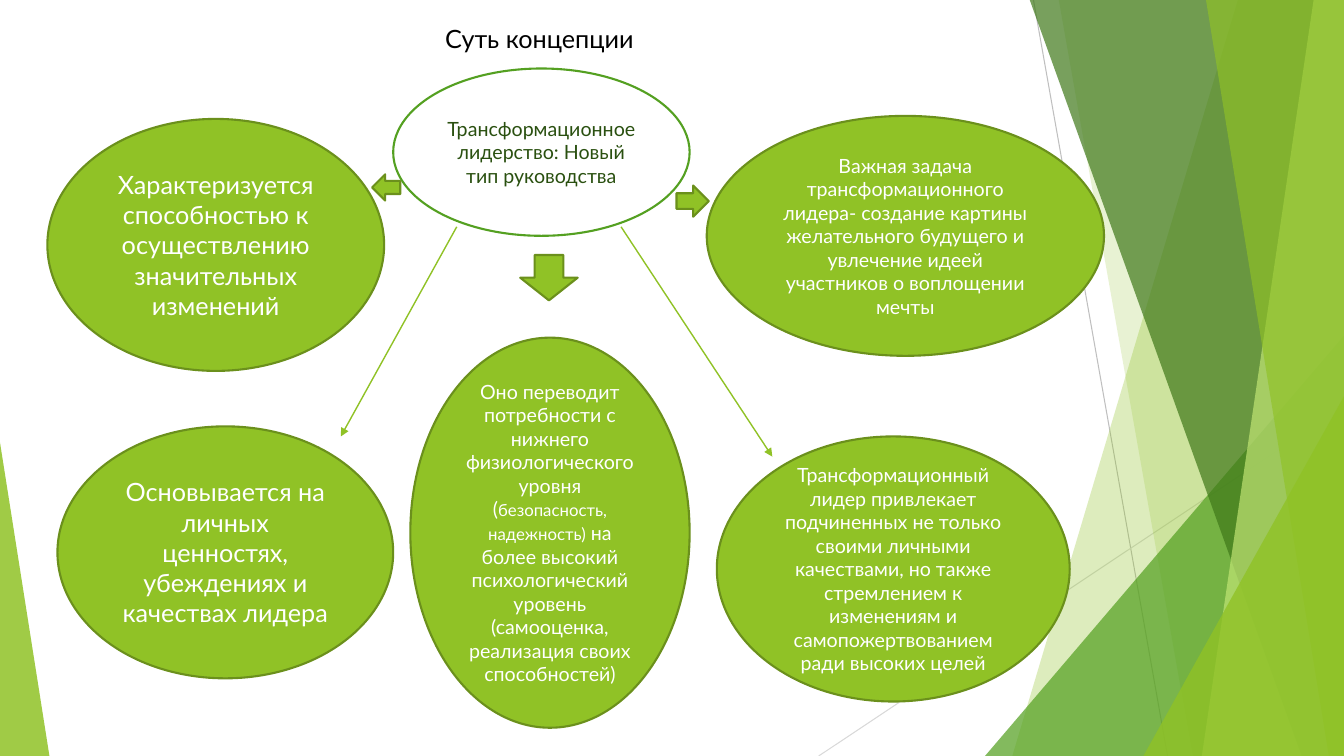
"""Build the slide on the essence of transformational leadership."""
from dataclasses import dataclass

from lxml import etree
from pptx import Presentation
from pptx import util as u
from pptx.dml.color import RGBColor
from pptx.enum import shapes, text
from pptx.oxml import ns

LIME = RGBColor(0x90, 0xC2, 0x26)
OLIVE = RGBColor(0x6B, 0x90, 0x1C)
GREEN = RGBColor(0x54, 0xA0, 0x21)
FOREST = RGBColor(0x3F, 0x78, 0x19)
PALE = RGBColor(0xC0, 0xE4, 0x74)
DARK = RGBColor(0x2A, 0x50, 0x10)
GRAY = RGBColor(0xBF, 0xBF, 0xBF)
SILVER = RGBColor(0xD9, 0xD9, 0xD9)
WHITE = RGBColor(0xFF, 0xFF, 0xFF)
BLACK = RGBColor(0, 0, 0)
FONT = "Lato"
WIDTH, HEIGHT, TOP = 13.33, 7.5, -0.01
KIND = shapes.MSO_SHAPE


@dataclass
class Band:
    """Translucent band from the slide's top edge to its bottom right."""
    top_x: float
    bottom_x: float
    color: RGBColor
    alpha: int


@dataclass
class Corner:
    """Translucent right triangle standing on the bottom edge."""
    left: float
    top: float
    width: float
    apex: int
    color: RGBColor
    alpha: int


@dataclass
class Line:
    """Straight line, with an arrowhead at its end if wanted."""
    start: tuple[float, float]
    end: tuple[float, float]
    color: RGBColor
    weight: float
    arrow: bool = False


@dataclass
class Figure:
    """Outlined shape; each run is a text with its own size or None."""
    kind: KIND
    box: tuple[float, float, float, float]
    runs: tuple[tuple[str, int | None], ...] = ()
    size: int = 14
    fill: RGBColor = LIME
    line: RGBColor = OLIVE
    color: RGBColor = WHITE


BACK_LINES = [
    Line((10.25, 0), (11.58, HEIGHT), GRAY, 0.75),
    Line((WIDTH, 4.03), (8.12, HEIGHT), SILVER, 0.75),
]
FACETS = [
    Band(12.28, 10.04, LIME, 30),
    Band(10.5, 11.83, LIME, 20),
    Corner(9.77, 3.33, 3.56, 1, GREEN, 72),
    Band(10.21, 12.91, FOREST, 70),
    Band(13.03, 11.92, PALE, 70),
    Band(11.96, 13.18, LIME, 65),
    Corner(11.34, 3.93, 1.99, 1, LIME, 80),
    Corner(0, 4.39, 0.49, 0, LIME, 85),
]
FIGURES = [
    Figure(KIND.OVAL, (3.9, 0.68, 2.94, 1.66),
           (("Трансформационное лидерство: Новый тип руководства", None),),
           fill=WHITE, line=GREEN, color=DARK),
    Figure(KIND.OVAL, (0.47, 1.18, 3.34, 2.5),
           (("Характеризуется способностью к осуществлению значительных "
             "изменений", None),), 18),
    Figure(KIND.OVAL, (0.57, 4.23, 3.33, 2.5),
           (("Основывается на личных ценностях, убеждениях и качествах "
             "лидера", None),), 18),
    Figure(KIND.OVAL, (4.07, 3.35, 2.77, 3.87),
           (("Оно переводит потребности с нижнего физиологического уровня (", 14),
            ("безопасность, надежность)", 12),
            (" на более высокий психологический уровень (самооценка, "
             "реализация своих способностей)", 14))),
    Figure(KIND.OVAL, (7.11, 4.33, 3.5, 2.63),
           (("Трансформационный лидер привлекает подчиненных не только своими "
             "личными качествами, но также стремлением к изменениям и "
             "самопожертвованием ради высоких целей", None),)),
    Figure(KIND.OVAL, (7.01, 1.15, 3.94, 2.38),
           (("Важная задача трансформационного лидера- создание картины "
             "желательного будущего и увлечение идеей участников о воплощении "
             "мечты", None),)),
    Figure(KIND.DOWN_ARROW, (5.16, 2.53, 0.57, 0.45)),
    Figure(KIND.RIGHT_ARROW, (6.71, 1.84, 0.32, 0.31)),
    Figure(KIND.LEFT_ARROW, (3.69, 1.73, 0.28, 0.26)),
]
ARROWS = [
    Line((4.53, 2.25), (3.38, 4.33), LIME, 1, True),
    Line((6.16, 2.25), (7.66, 4.53), LIME, 1, True),
]


def inches(values) -> list[u.Length]:
    """Turn plain numbers into lengths."""
    return [u.Inches(v) for v in values]


def add_line(s, line: Line) -> None:
    """Draw a straight line."""
    c = s.shapes.add_connector(shapes.MSO_CONNECTOR.STRAIGHT,
                               *inches(line.start + line.end))
    c.line.color.rgb = line.color
    c.line.width = u.Pt(line.weight)
    if line.arrow:
        etree.SubElement(c.line._get_or_add_ln(), ns.qn("a:tailEnd"), type="triangle")
    etree.SubElement(c._element.spPr, ns.qn("a:effectLst"))


def add_facet(s, facet: Band | Corner) -> None:
    """Draw a translucent background facet."""
    if isinstance(facet, Band):
        corners = [(facet.top_x, TOP), (WIDTH, TOP), (WIDTH, HEIGHT),
                   (facet.bottom_x, HEIGHT)]
        points = [inches(corner) for corner in corners]
        builder = s.shapes.build_freeform(*points[0])
        builder.add_line_segments(points[1:], close=True)
        sp = builder.convert_to_shape()
    else:
        sp = s.shapes.add_shape(KIND.ISOSCELES_TRIANGLE, *inches(
            (facet.left, facet.top, facet.width, HEIGHT - facet.top)))
        sp.adjustments[0] = facet.apex
    sp.shadow.inherit = False
    sp.line.fill.background()
    sp.fill.solid()
    sp.fill.fore_color.rgb = facet.color
    color = sp._element.spPr.find(".//" + ns.qn("a:srgbClr"))
    etree.SubElement(color, ns.qn("a:alpha"), val=str(facet.alpha * 1000))


def write(tf, runs, size: int, color: RGBColor) -> None:
    """Fill a text frame with one centred paragraph."""
    tf.word_wrap = True
    p = tf.paragraphs[0]
    p.alignment = text.PP_ALIGN.CENTER
    p.font.name, p.font.size, p.font.color.rgb = FONT, u.Pt(size), color
    for words, own_size in runs:
        r = p.add_run()
        r.text = words
        if own_size:
            r.font.size = u.Pt(own_size)


def add_figure(s, figure: Figure) -> None:
    """Draw an ellipse or a block arrow."""
    sp = s.shapes.add_shape(figure.kind, *inches(figure.box))
    sp.shadow.inherit = False
    sp.fill.solid()
    sp.fill.fore_color.rgb = figure.fill
    sp.line.color.rgb = figure.line
    sp.line.width = u.Pt(1.5)
    if figure.runs:
        sp.text_frame.vertical_anchor = text.MSO_ANCHOR.MIDDLE
        write(sp.text_frame, figure.runs, figure.size, figure.color)


def main() -> None:
    """Build and save the slide."""
    prs = Presentation()
    prs.slide_width, prs.slide_height = inches((WIDTH, HEIGHT))
    s = prs.slides.add_slide(prs.slide_layouts[6])
    for line in BACK_LINES:
        add_line(s, line)
    for facet in FACETS:
        add_facet(s, facet)
    for figure in FIGURES:
        add_figure(s, figure)
    for arrow in ARROWS:
        add_line(s, arrow)
    title = s.shapes.add_textbox(*inches((4.25, 0.18, 2.2, 0.4)))
    write(title.text_frame, (("Суть концепции", None),), 18, BLACK)
    prs.save("out.pptx")


if __name__ == "__main__":
    main()
